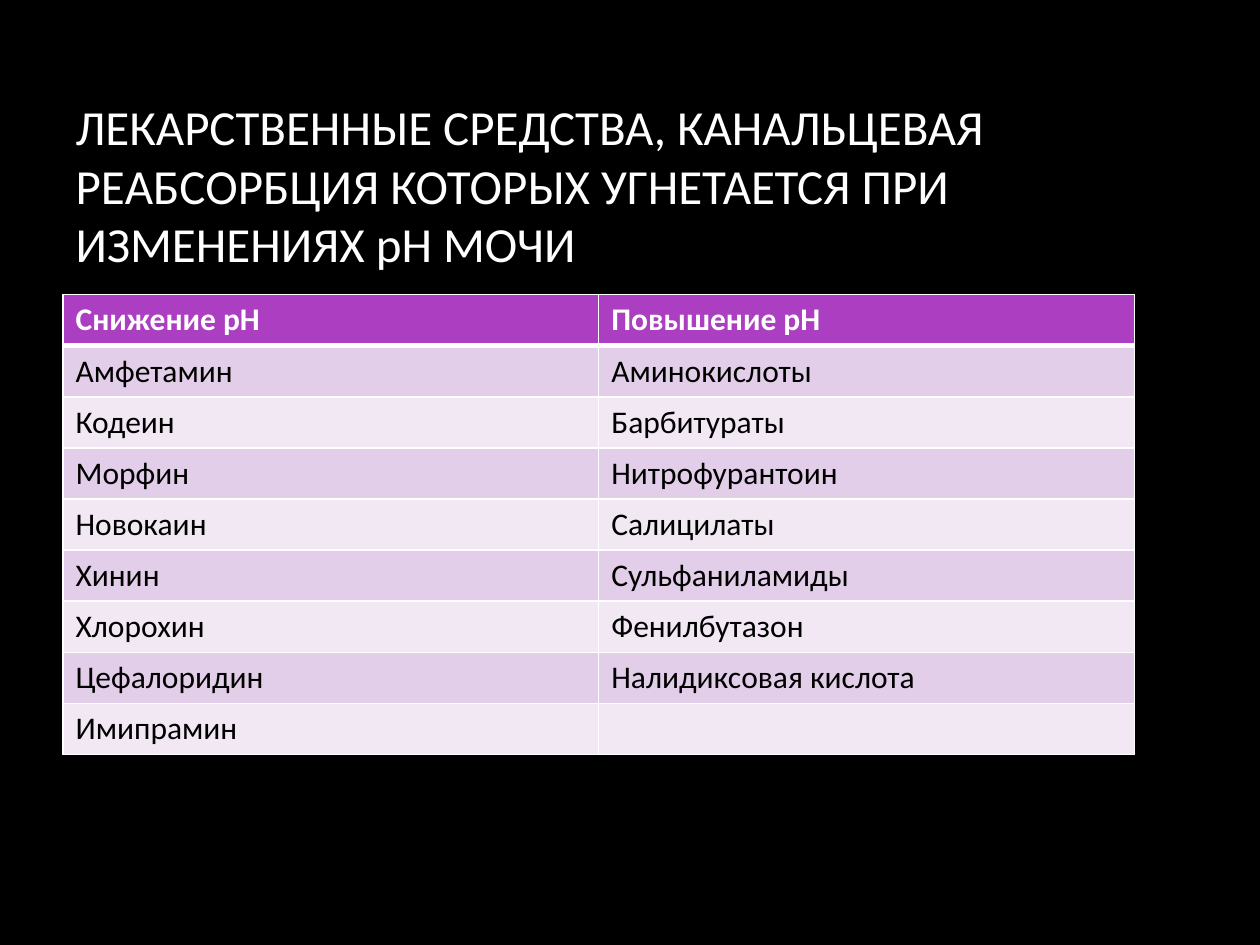
from dataclasses import dataclass

from lxml.etree import SubElement
from pptx import Presentation
from pptx.dml.color import RGBColor as Color
from pptx.enum.text import MSO_ANCHOR as Anchor, MSO_AUTO_SIZE as AutoSize, PP_ALIGN as Align
from pptx.oxml.ns import qn
from pptx.util import Cm, Pt


@dataclass(frozen=True)
class Theme:
    font: str = "Calibri"
    title_size: int = 28
    table_size: int = 18
    background: str = "000000"
    light: str = "FFFFFF"
    dark: str = "000000"
    header: str = "AC3EC1"
    bands: tuple = ("E3CEE9", "F1E8F4")
    border: float = 1
    header_border: float = 3


TITLE = "ЛЕКАРСТВЕННЫЕ СРЕДСТВА, КАНАЛЬЦЕВАЯ РЕАБСОРБЦИЯ КОТОРЫХ УГНЕТАЕТСЯ ПРИ ИЗМЕНЕНИЯХ pН МОЧИ"
DRUGS = [
    ("Снижение рН", "Повышение рН"),
    ("Амфетамин", "Аминокислоты"),
    ("Кодеин", "Барбитураты"),
    ("Морфин", "Нитрофурантоин"),
    ("Новокаин", "Салицилаты"),
    ("Хинин", "Сульфаниламиды"),
    ("Хлорохин", "Фенилбутазон"),
    ("Цефалоридин", "Налидиксовая кислота"),
    ("Имипрамин", ""),
]


class SlideBuilder:
    def __init__(self, slide, theme):
        self.slide = slide
        self.theme = theme

    def background(self):
        fill = self.slide.background.fill
        fill.solid()
        fill.fore_color.rgb = Color.from_string(self.theme.background)

    def set_font(self, paragraph, size, color, bold=False):
        font = paragraph.font
        font.name = self.theme.font
        font.size = Pt(size)
        font.bold = bold
        font.color.rgb = Color.from_string(color)

    def title(self, text, left, top, width, height):
        shape = self.slide.shapes.title
        shape.left, shape.top, shape.width, shape.height = left, top, width, height
        frame = shape.text_frame
        frame.text = text
        frame.word_wrap = True
        frame.auto_size = AutoSize.NONE
        frame.vertical_anchor = Anchor.MIDDLE
        paragraph = frame.paragraphs[0]
        paragraph.alignment = Align.LEFT
        self.set_font(paragraph, self.theme.title_size, self.theme.light)

    def cell_borders(self, cell, top, bottom):
        """Add the four border lines; they must precede the cell's fill."""
        side = self.theme.border
        properties = cell._tc.get_or_add_tcPr()
        for tag, width in (("lnL", side), ("lnR", side), ("lnT", top), ("lnB", bottom)):
            line = SubElement(properties, qn(f"a:{tag}"), w=str(Pt(width)))
            fill = SubElement(line, qn("a:solidFill"))
            SubElement(fill, qn("a:srgbClr"), val=self.theme.light)

    def table(self, rows, left, top, width, height):
        theme = self.theme
        frame = self.slide.shapes.add_table(len(rows), len(rows[0]), left, top, width, height)
        for row, texts in enumerate(rows):
            is_header = row == 0
            fill_color = theme.header if is_header else theme.bands[(row - 1) % 2]
            text_color = theme.light if is_header else theme.dark
            top_border = theme.header_border if row == 1 else theme.border
            bottom_border = theme.header_border if is_header else theme.border
            for column, text in enumerate(texts):
                cell = frame.table.cell(row, column)
                cell.text = text
                self.cell_borders(cell, top_border, bottom_border)
                cell.fill.solid()
                cell.fill.fore_color.rgb = Color.from_string(fill_color)
                paragraph = cell.text_frame.paragraphs[0]
                self.set_font(paragraph, theme.table_size, text_color, is_header)


def main():
    presentation = Presentation()
    presentation.slide_width, presentation.slide_height = Cm(25.4), Cm(19.05)
    title_only = presentation.slide_layouts[5]
    builder = SlideBuilder(presentation.slides.add_slide(title_only), Theme())
    left, width = Cm(1.27), Cm(21.6)
    builder.background()
    builder.title(TITLE, left, Cm(1.7), width, Cm(4.04))
    builder.table(DRUGS, left, Cm(5.94), width, Cm(9.27))
    presentation.save("out.pptx")


if __name__ == "__main__":
    main()
